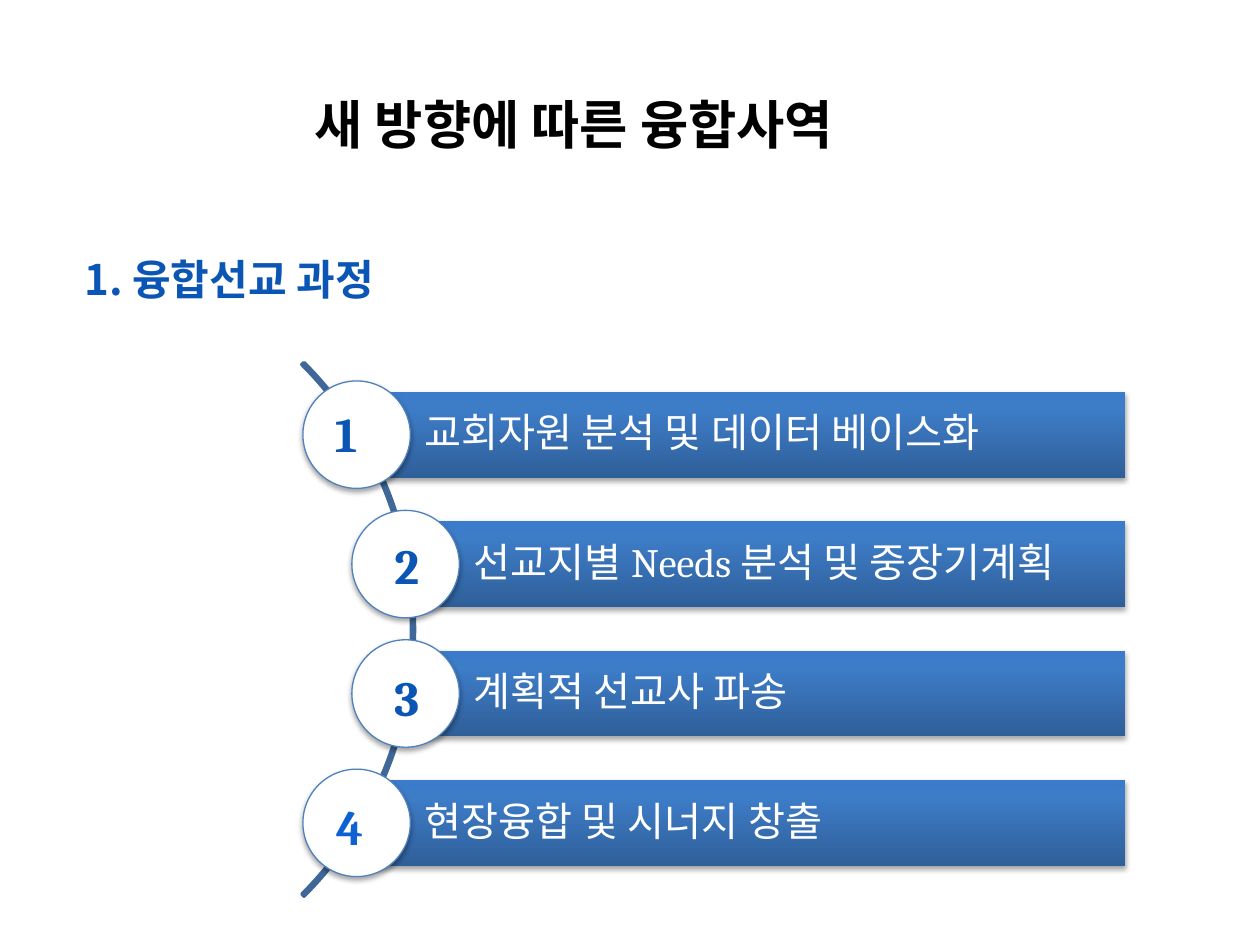
from dataclasses import dataclass

from lxml import etree
from pptx import Presentation
from pptx.dml.color import RGBColor
from pptx.enum.shapes import MSO_SHAPE
from pptx.enum.text import MSO_ANCHOR, PP_ALIGN
from pptx.oxml.ns import qn
from pptx.util import Pt

ARC, BAR, CIRCLE = MSO_SHAPE.BLOCK_ARC, MSO_SHAPE.RECTANGLE, MSO_SHAPE.OVAL
TOP, MIDDLE = MSO_ANCHOR.TOP, MSO_ANCHOR.MIDDLE
LEFT = PP_ALIGN.LEFT

HANGUL_FONT = "Noto Sans CJK KR"
BLUE = "0B55B5"
BAR_GRADIENT = [(0, "2F5F99"), (80, "3D7CC7"), (100, "3A7CCB")]
BAR_RIGHT, BAR_HEIGHT = 643, 49
FIRST_BAR_TOP, BAR_PITCH = 223.9, 73.95
CIRCLE_SIZE = 61.4


@dataclass
class Box:
    left: float
    top: float
    width: float
    height: float

    def lengths(self):
        return [Pt(v) for v in (self.left, self.top, self.width, self.height)]


@dataclass
class TextStyle:
    size: float
    font: str
    color: str
    bold: bool = True
    anchor: MSO_ANCHOR = TOP
    insets: tuple = (7.2, 3.6, 7.2, 3.6)
    line_spacing: float = 1.0


@dataclass
class Step:
    label: str
    bar_left: float
    digit_left: float
    digit_top: float
    digit_color: str = BLUE


TITLE = TextStyle(30, "Arial", "000000")
SUBTITLE = TextStyle(24, HANGUL_FONT, BLUE, insets=(0, 0, 0, 0))
BAR_LABEL = TextStyle(23, "Cambria", "FFFFFF", bold=False, anchor=MIDDLE,
                      insets=(38.9, 4.3, 4.3, 4.3), line_spacing=0.9)

STEPS = [
    Step("교회자원 분석 및 데이터 베이스화", 203.8, 184.3, 226.8),
    Step("선교지별 Needs 분석 및 중장기계획", 231.8, 218.2, 302.4),
    Step("계획적 선교사 파송", 231.8, 218.2, 378),
    Step("현장융합 및 시너지 창출", 203.8, 185, 451.4, "0D61D1"),
]


def rgb(color: str) -> RGBColor:
    return RGBColor.from_string(color)


def write(shape, text: str, style: TextStyle) -> None:
    frame = shape.text_frame
    left, top, right, bottom = (Pt(v) for v in style.insets)
    frame_format = {"word_wrap": True, "vertical_anchor": style.anchor,
                    "margin_left": left, "margin_top": top,
                    "margin_right": right, "margin_bottom": bottom}
    for name, value in frame_format.items():
        setattr(frame, name, value)
    paragraph = frame.paragraphs[0]
    paragraph.alignment = LEFT
    paragraph.line_spacing = style.line_spacing
    run = paragraph.add_run()
    run.text = text
    font_format = {"size": Pt(style.size), "name": style.font, "bold": style.bold}
    for name, value in font_format.items():
        setattr(run.font, name, value)
    run.font.color.rgb = rgb(style.color)
    east_asian = etree.SubElement(run.font._element, qn("a:ea"))
    east_asian.set("typeface", HANGUL_FONT)


def add_text(slide, box: Box, text: str, style: TextStyle) -> None:
    write(slide.shapes.add_textbox(*box.lengths()), text, style)


def add_color(parent, color: str):
    element = etree.SubElement(parent, qn("a:srgbClr"))
    element.set("val", color)
    return element


def add_shadow(shape) -> None:
    shape.shadow.inherit = False
    effects = shape._element.spPr.find(qn("a:effectLst"))
    shadow = etree.SubElement(effects, qn("a:outerShdw"))
    shadow_format = {"blurRad": Pt(3.1), "dist": Pt(1.8), "dir": 90 * 60000,
                     "rotWithShape": 0}
    for name, value in shadow_format.items():
        shadow.set(name, str(int(value)))
    alpha = etree.SubElement(add_color(shadow, "000000"), qn("a:alpha"))
    alpha.set("val", "35000")


def fill_gradient(shape) -> None:
    """Fill from dark at the bottom edge to light at the top."""
    shape.fill.gradient()
    shape.fill.gradient_angle = 90
    stops = shape._element.spPr.find(qn("a:gradFill")).find(qn("a:gsLst"))
    for stop in list(stops):
        stops.remove(stop)
    for percent, color in BAR_GRADIENT:
        stop = etree.SubElement(stops, qn("a:gs"))
        stop.set("pos", str(percent * 1000))
        add_color(stop, color)


def outline(shape, color: str, width: float) -> None:
    shape.line.color.rgb = rgb(color)
    shape.line.width = Pt(width)


def add_arc(slide) -> None:
    arc = slide.shapes.add_shape(ARC, *Box(-194.4, 144, 431.3, 431.3).lengths())
    for index, value in enumerate((189, 27, 0.004)):
        arc.adjustments[index] = value
    arc.shadow.inherit = False
    arc.fill.background()
    outline(arc, "3F6797", 2)


def add_step(slide, index: int, step: Step) -> None:
    """Draw a bar with its label and a circle centred on the bar's left side."""
    top = FIRST_BAR_TOP + index * BAR_PITCH
    bar_box = Box(step.bar_left, top, BAR_RIGHT - step.bar_left, BAR_HEIGHT)
    bar = slide.shapes.add_shape(BAR, *bar_box.lengths())
    fill_gradient(bar)
    bar.line.fill.background()
    add_shadow(bar)
    write(bar, step.label, BAR_LABEL)

    circle_box = Box(step.bar_left - CIRCLE_SIZE / 2,
                     top + (BAR_HEIGHT - CIRCLE_SIZE) / 2, CIRCLE_SIZE, CIRCLE_SIZE)
    circle = slide.shapes.add_shape(CIRCLE, *circle_box.lengths())
    circle.fill.solid()
    circle.fill.fore_color.rgb = rgb("FFFFFF")
    outline(circle, "4F81BD", 0.75)
    add_shadow(circle)

    add_text(slide, Box(step.digit_left, step.digit_top, 22.3, 41),
             str(index + 1), TextStyle(28, "Cambria", step.digit_color))


def main() -> None:
    deck = Presentation()
    deck.slide_width, deck.slide_height = Pt(720), Pt(540)
    slide = deck.slides.add_slide(deck.slide_layouts[6])
    add_text(slide, Box(172.8, 49, 559.4, 33.8), "새 방향에 따른 융합사역", TITLE)
    add_text(slide, Box(48.2, 144.7, 559.4, 28.8), "1. 융합선교 과정", SUBTITLE)
    add_arc(slide)
    for index, step in enumerate(STEPS):
        add_step(slide, index, step)
    deck.save("out.pptx")


if __name__ == "__main__":
    main()
